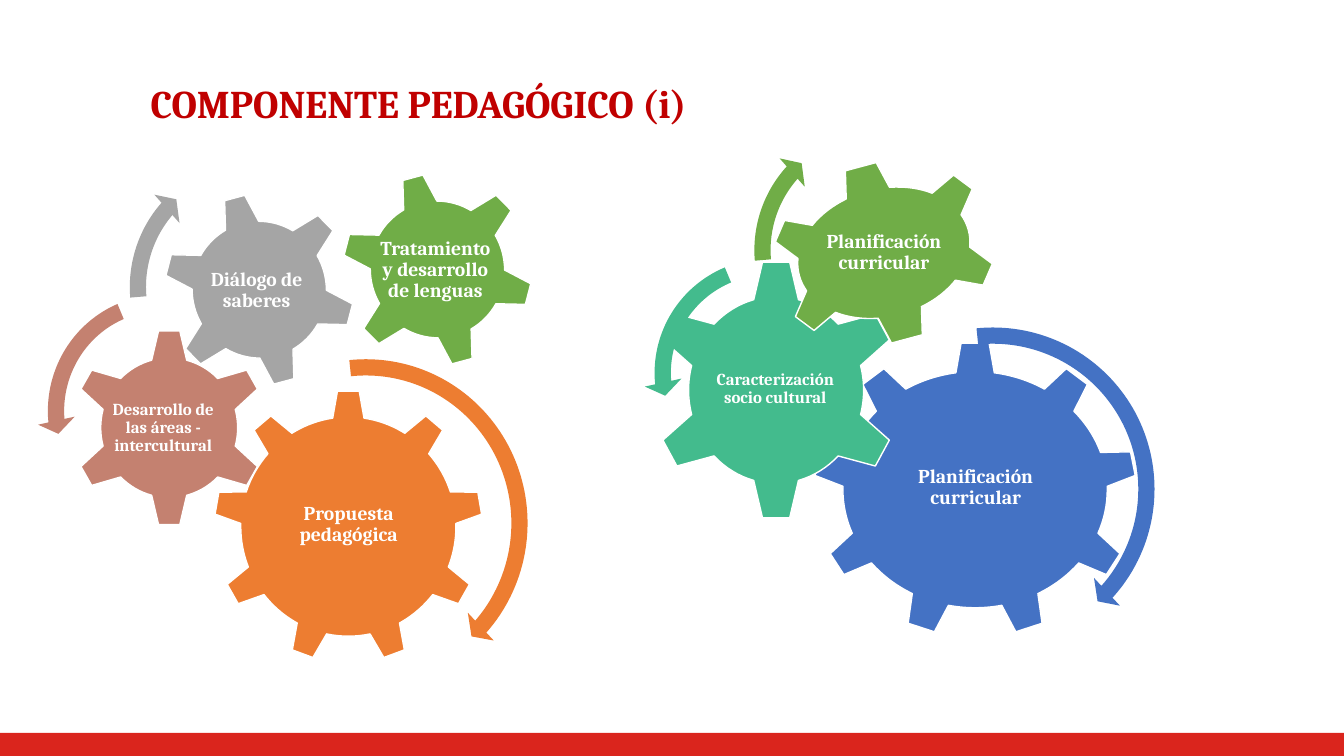
from pptx import Presentation
from pptx.dml.color import RGBColor as Rgb
from pptx.enum.shapes import MSO_SHAPE as Kind
from pptx.enum.text import MSO_ANCHOR as Anchor, MSO_AUTO_SIZE as Fit, PP_ALIGN as Align
from pptx.util import Cm, Pt

FONT = "Cambria"
WHITE = Rgb(0xFF, 0xFF, 0xFF)
RED = Rgb(0xDA, 0x25, 0x1D)
DARK = Rgb(0xC0, 0x00, 0x00)
BLUE = Rgb(0x44, 0x72, 0xC4)
TEAL = Rgb(0x43, 0xBB, 0x8D)
GREEN = Rgb(0x70, 0xAD, 0x47)
ROSE = Rgb(0xC4, 0x81, 0x70)
GREY = Rgb(0xA5, 0xA5, 0xA5)
ORANGE = Rgb(0xED, 0x7D, 0x31)

WIDE = (Kind.CIRCULAR_ARROW, (0.047, 2.99, 25.218, 158.492, 0.055))
BACK = (Kind.LEFT_CIRCULAR_ARROW, (0.065, 4.3, 104.891, 148.378, 0.075))
RISE = (Kind.CIRCULAR_ARROW, (0.06, 3.941, 133.138, 105.082, 0.07))


def place(base, box):
    """Turn a box relative to a base corner into slide lengths."""
    left, top, width, height = box
    return Cm(base[0] + left), Cm(base[1] + top), Cm(width), Cm(height)


def draw(slide, kind, spot, color):
    """Add a flat shape with no outline."""
    shape = slide.shapes.add_shape(kind, *spot)
    shape.shadow.inherit = False
    shape.fill.solid()
    shape.fill.fore_color.rgb = color
    shape.line.fill.background()
    return shape


def write(slide, spot, text, size, color):
    """Add a box of bold centred text and return its frame."""
    frame = slide.shapes.add_textbox(*spot).text_frame
    frame.word_wrap = True
    frame.text = text
    line = frame.paragraphs[0]
    line.alignment = Align.CENTER
    font = line.runs[0].font
    font.name, font.size, font.bold = FONT, Pt(size), True
    font.color.rgb = color
    return frame


def gear(slide, base, kind, box, color, text, size, label, turn=0):
    """Add a gear with its label."""
    wheel = draw(slide, kind, place(base, box), color)
    wheel.line.color.rgb = WHITE
    wheel.line.width = Pt(1)
    wheel.rotation = turn
    frame = write(slide, place(base, label), text, size, WHITE)
    frame.vertical_anchor = Anchor.MIDDLE
    frame.margin_left = frame.margin_right = Cm(0.05)
    frame.margin_top = frame.margin_bottom = Cm(0.05)
    frame.paragraphs[0].line_spacing = 0.9


def arrow(slide, base, style, box, color):
    """Add a curved arrow that shows the turn of a gear."""
    kind, bends = style
    curve = draw(slide, kind, place(base, box), color)
    for index, bend in enumerate(bends):
        curve.adjustments[index] = bend


def plan(slide, base):
    """Add the planning gears on the right."""
    gear(slide, base, Kind.GEAR_9, (4.27, 5.72, 8.15, 7.44), BLUE,
         "Planificación curricular", 14, (5.87, 7.47, 4.98, 3.84))
    gear(slide, base, Kind.GEAR_6, (0.18, 3.63, 6.3, 6.6), TEAL,
         "Caracterización socio cultural", 12, (1.75, 5.26, 3.12, 3.3))
    gear(slide, base, Kind.GEAR_6, (3.15, 1.17, 5.79, 4.6), GREEN,
         "Planificación curricular", 14, (4.5, 2.11, 3.1, 2.72), 345)
    arrow(slide, base, WIDE, (4.45, 5.08, 8.69, 8.69), BLUE)
    arrow(slide, base, BACK, (0, 3.35, 6.3, 6.3), TEAL)
    arrow(slide, base, RISE, (2.51, 0, 6.81, 6.81), GREEN)


def teach(slide, base):
    """Add the teaching gears on the left."""
    gear(slide, base, Kind.GEAR_6, (0.86, 4.5, 4.93, 5), ROSE,
         "Desarrollo de las áreas - intercultural", 12, (1.78, 5.77, 2.79, 2.46))
    arrow(slide, base, BACK, (0, 3.38, 6.3, 6.4), ROSE)
    gear(slide, base, Kind.GEAR_6, (3.18, 1.07, 4.83, 4.9), GREY,
         "Diálogo de saberes", 14, (3.94, 2.16, 3.18, 2.77), 345)
    arrow(slide, base, RISE, (2.06, 0, 6.81, 6.91), GREY)
    gear(slide, base, Kind.GEAR_9, (4.45, 6.05, 6.78, 6.88), ORANGE,
         "Propuesta pedagógica", 14, (5.82, 7.67, 4.06, 3.53))
    arrow(slide, base, WIDE, (3.94, 5, 8.69, 8.81), ORANGE)
    gear(slide, base, Kind.GEAR_6, (7.67, 0.56, 4.83, 4.9), GREEN,
         "Tratamiento y desarrollo de lenguas", 14, (8.46, 1.65, 3.15, 2.77), 345)


def head(slide, box):
    """Add the slide title."""
    frame = write(slide, place((0, 0), box), "COMPONENTE PEDAGÓGICO (i)", 28, DARK)
    frame.auto_size = Fit.SHAPE_TO_FIT_TEXT


def main():
    """Build and save the slide."""
    deck = Presentation()
    deck.slide_width, deck.slide_height = Cm(33.87), Cm(19.05)
    slide = deck.slides.add_slide(deck.slide_layouts[6])
    draw(slide, Kind.RECTANGLE, place((0, 18.47), (0, 0, 33.87, 0.58)), RED)
    head(slide, (-0.86, 1.88, 22.81, 1.45))
    plan(slide, (16.23, 2.9))
    teach(slide, (0.94, 3.78))
    deck.save("out.pptx")


if __name__ == "__main__":
    main()
